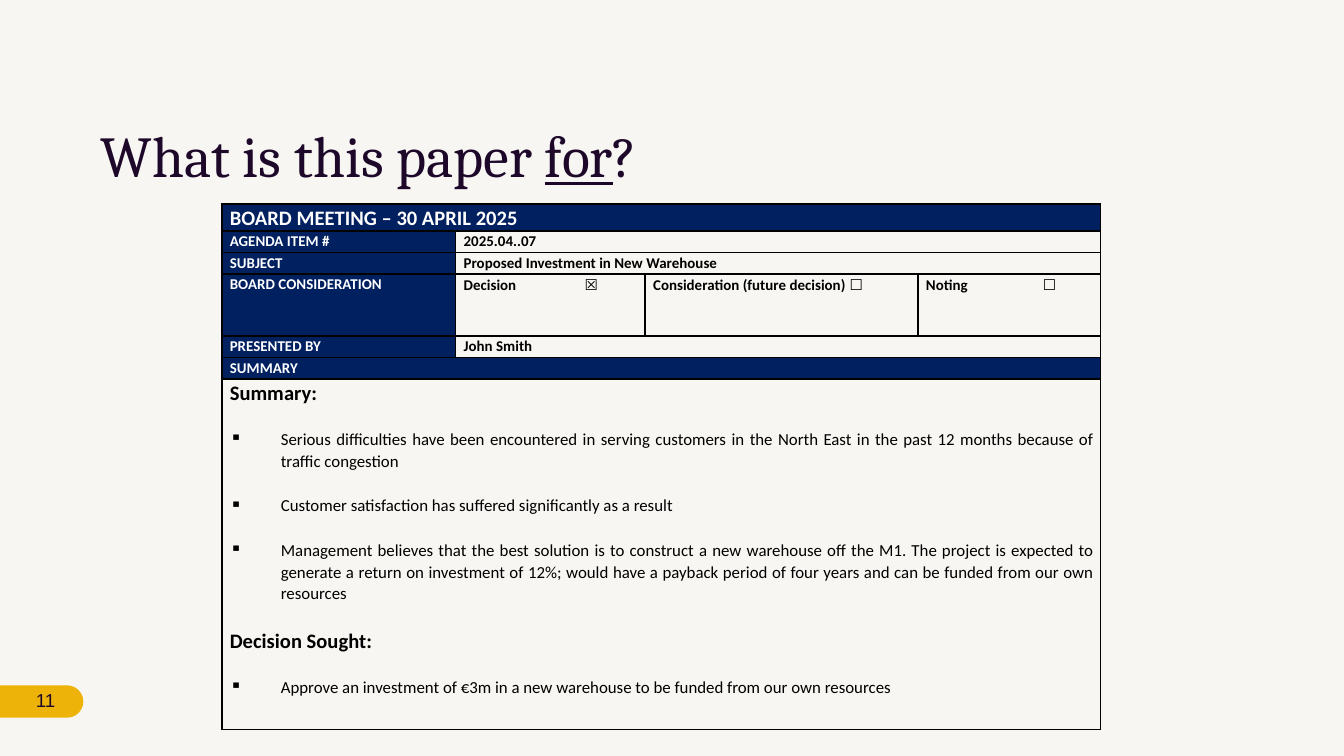
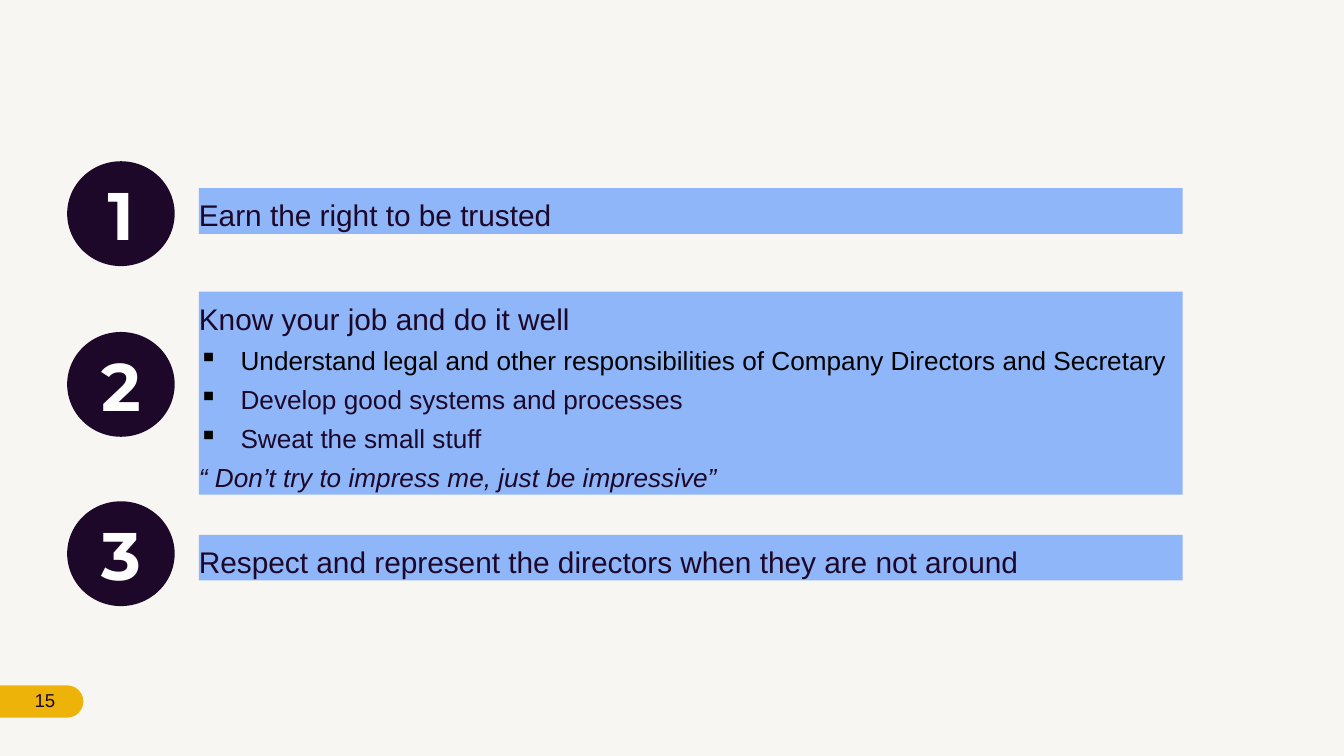
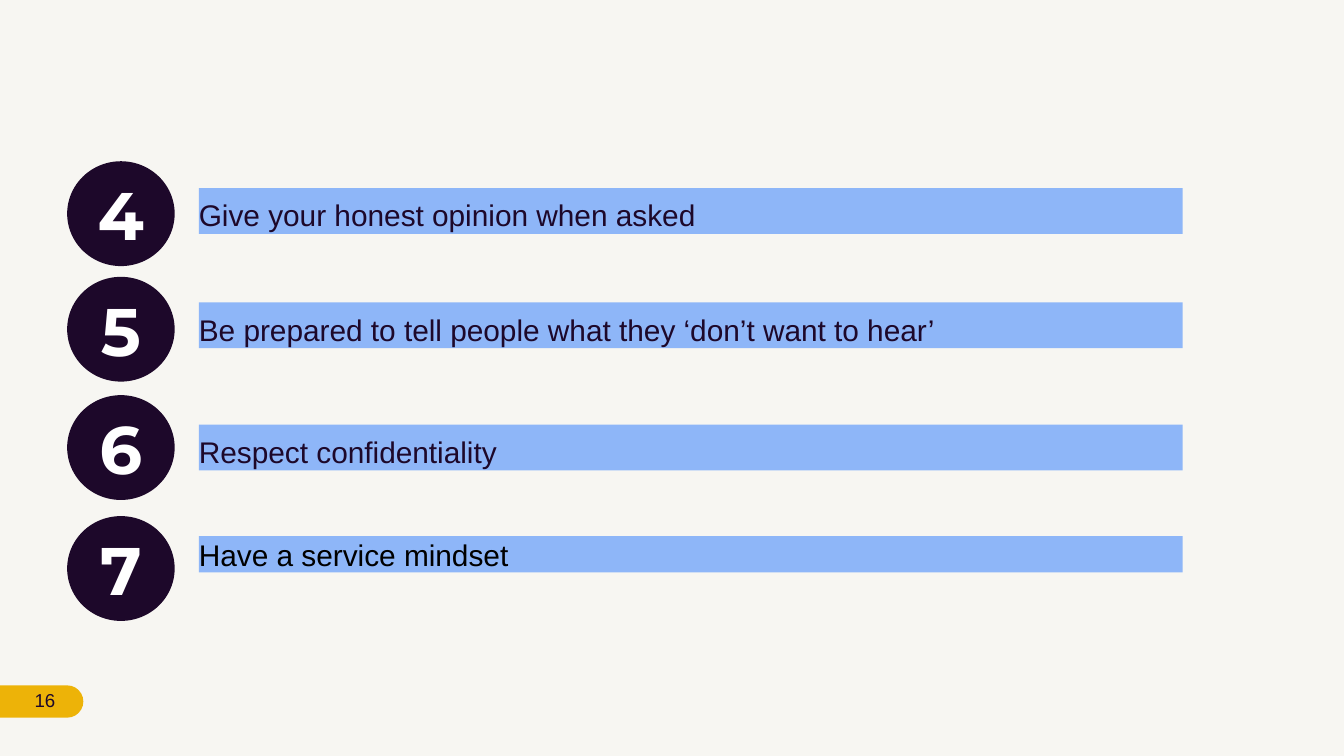
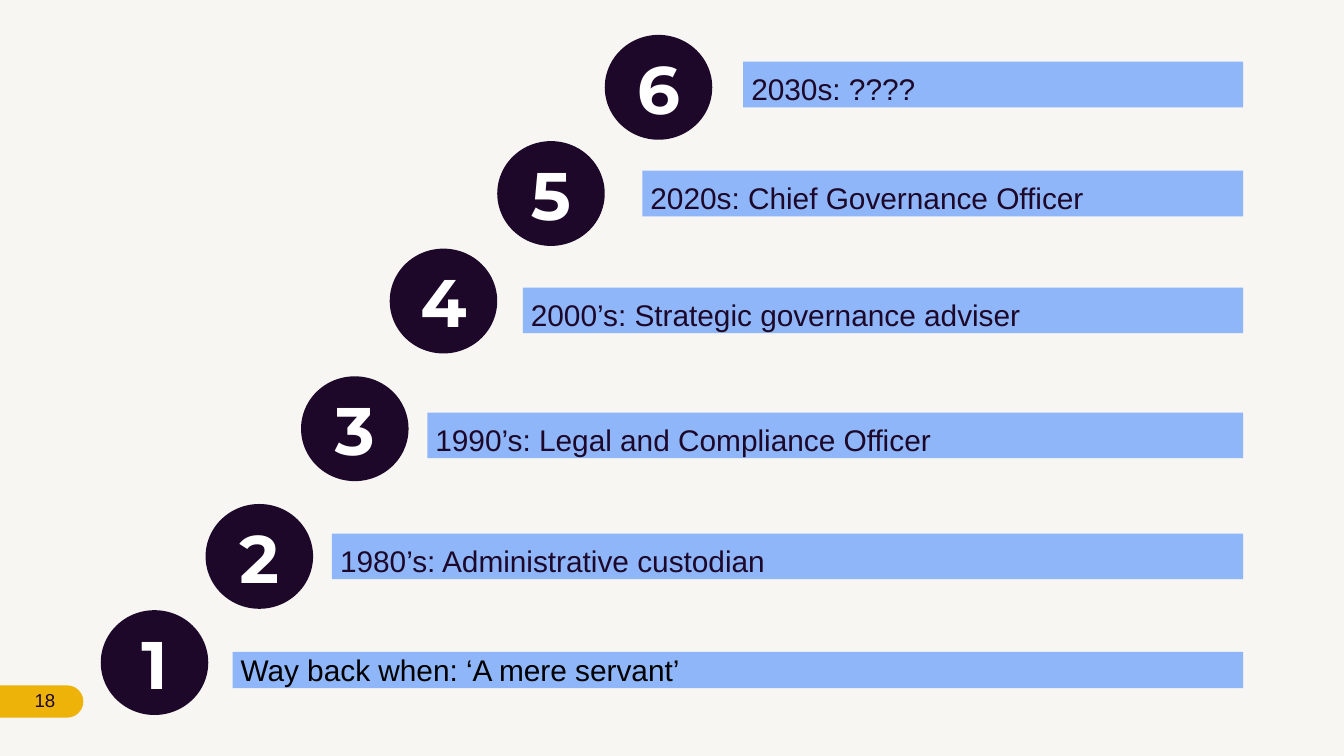
"""Build four slides on board papers and the company secretary's role."""
from lxml import etree
from pptx import Presentation
from pptx.dml.color import RGBColor
from pptx.enum.shapes import MSO_SHAPE
from pptx.enum.text import MSO_ANCHOR, MSO_AUTO_SIZE, PP_ALIGN
from pptx.oxml.ns import qn
from pptx.util import Inches, Pt

OVAL, RECT = MSO_SHAPE.OVAL, MSO_SHAPE.RECTANGLE
TAB = MSO_SHAPE.ROUND_2_SAME_RECTANGLE
LEFT, MID, RIGHT, JUST = PP_ALIGN.LEFT, PP_ALIGN.CENTER, PP_ALIGN.RIGHT, PP_ALIGN.JUSTIFY
TOP, CENTRE = MSO_ANCHOR.TOP, MSO_ANCHOR.MIDDLE
GROW = MSO_AUTO_SIZE.SHAPE_TO_FIT_TEXT


class Theme:
    paper, plum, gold, sky = "F7F6F2", "1D082A", "EDB308", "8EB6F8"
    navy, black, white = "002060", "000000", "FFFFFF"
    title = ("Cambria", 31, plum, False)
    page = ("Arial", 10, plum, False)
    ball = ("Montserrat", 36, white, True)
    lead = ("Arial", 16, plum, False)
    dark = ("Arial", 16, black, False)
    item = ("Arial", 14, plum, False)
    key = ("Arial", 14, black, False)
    band = ("Calibri", 11, white, True)
    label = ("Calibri", 8, white, True)
    value = ("Calibri", 8, black, True)
    head = ("Calibri", 11, black, True)
    body = ("Calibri", 9, black, False)


prs = Presentation()
prs.slide_width = Inches(10)
prs.slide_height = prs.slide_width * 9 // 16
UNIT = prs.slide_width // 100
back = prs.slide_master.background.fill
back.solid()
back.fore_color.rgb = RGBColor.from_string(Theme.paper)


def put(slide, box, kind=None, fill=None, pad=0, anchor=TOP):
    """Place a shape or text box, with its box in grid units."""
    area = [round(n * UNIT) for n in box]
    if kind is None:
        shape = slide.shapes.add_textbox(*area)
    else:
        shape = slide.shapes.add_shape(kind, *area)
        shape.shadow.inherit = False
        shape.fill.solid()
        shape.fill.fore_color.rgb = RGBColor.from_string(fill)
        shape.line.fill.background()
    frame = shape.text_frame
    frame.word_wrap = True
    frame.vertical_anchor = anchor
    frame.margin_left = frame.margin_right = round(pad * UNIT)
    frame.margin_top = frame.margin_bottom = round(pad * UNIT)
    return shape


def write(par, text, look, align=LEFT, space=1.0, dent=0, stop=0):
    """Fill a paragraph, with an optional bullet indent or tab stop."""
    par.alignment = align
    par.line_spacing = space
    props = par._p.get_or_add_pPr()
    if dent:
        props.set("marL", str(round(dent * UNIT)))
        props.set("indent", str(-round(dent * UNIT)))
        tint = etree.SubElement(props, qn("a:buClr"))
        etree.SubElement(tint, qn("a:srgbClr"), val=Theme.black)
        etree.SubElement(props, qn("a:buChar"), char="▪")
    if stop:
        tabs = etree.SubElement(props, qn("a:tabLst"))
        etree.SubElement(tabs, qn("a:tab"), pos=str(round(stop * UNIT)), algn="l")
    face, size, tint, bold = look
    font = par.font
    font.name, font.size, font.bold = face, Pt(size), bold
    font.color.rgb = RGBColor.from_string(tint)
    par.add_run().text = text


slides = []
for num in (11, 15, 16, 18):
    slide = prs.slides.add_slide(prs.slide_layouts[6])
    flag = put(slide, (1.9, 49.1, 2.4, 6.2), TAB, Theme.gold)
    flag.rotation = 90
    flag.adjustments[0], flag.adjustments[1] = 0.5, 0
    page = put(slide, (1.1, 50.4, 4, 3.7), pad=1)
    write(page.text_frame.paragraphs[0], str(num), Theme.page, RIGHT)
    slides.append(slide)

slide = slides[0]
par = put(slide, (7.5, 8.9, 64.8, 6.3)).text_frame.paragraphs[0]
write(par, "What is this paper ", Theme.title)
run = par.add_run()
run.text, run.font.underline = "for", True
par.add_run().text = "?"

cols = (17.4, 14.1, 20.3, 13.6)
rows = (2, 1.6, 1.6, 4.6, 1.6, 1.6, 26.1)
area = [round(n * UNIT) for n in (16.5, 15.2, sum(cols), sum(rows))]
grid = slide.shapes.add_table(len(rows), len(cols), *area).table
grid.first_row = grid.horz_banding = False
for col, size in zip(grid.columns, cols):
    col.width = round(size * UNIT)
for row, size in zip(grid.rows, rows):
    row.height = round(size * UNIT)
for r, c in ((0, 0), (1, 1), (2, 1), (4, 1), (5, 0), (6, 0)):
    grid.cell(r, c).merge(grid.cell(r, 3))

for r in range(len(rows)):
    for c in range(len(cols)):
        cell = grid.cell(r, c)
        cell.margin_left = cell.margin_right = round(0.6 * UNIT)
        cell.margin_top = cell.margin_bottom = 0
        if r in (0, 5) or (c == 0 and r < 6):
            cell.fill.solid()
            cell.fill.fore_color.rgb = RGBColor.from_string(Theme.navy)
        else:
            cell.fill.background()
        props = cell._tc.get_or_add_tcPr()
        for spot, side in enumerate(("lnL", "lnR", "lnT", "lnB")):
            line = etree.Element(qn("a:" + side), w=str(Pt(1)))
            fill = etree.SubElement(line, qn("a:solidFill"))
            etree.SubElement(fill, qn("a:srgbClr"), val=Theme.black)
            props.insert(spot, line)

facts = [
    (0, 0, "BOARD MEETING – 30 APRIL 2025", Theme.band),
    (1, 0, "AGENDA ITEM #", Theme.label),
    (1, 1, "2025.04..07", Theme.value),
    (2, 0, "SUBJECT", Theme.label),
    (2, 1, "Proposed Investment in New Warehouse", Theme.value),
    (3, 0, "BOARD CONSIDERATION", Theme.label),
    (4, 0, "PRESENTED BY", Theme.label),
    (4, 1, "John Smith", Theme.value),
    (5, 0, "SUMMARY", Theme.label),
]
for r, c, text, look in facts:
    write(grid.cell(r, c).text_frame.paragraphs[0], text, look, JUST, 1.07)

checks = [("Decision\t", "☒", 9), ("Consideration (future decision)", " ☐", 0),
          ("Noting\t", "☐", 8.7)]
for c, (text, mark, stop) in enumerate(checks, 1):
    par = grid.cell(3, c).text_frame.paragraphs[0]
    write(par, text, Theme.value, JUST, 1.07, stop=stop)
    run = par.add_run()
    run.text, run.font.name = mark, "Lato"

brief = [
    ("Summary:", Theme.head, 0),
    ("Serious difficulties have been encountered in serving customers in the North East "
     "in the past 12 months because of traffic congestion", Theme.body, 3.8),
    ("Customer satisfaction has suffered significantly as a result", Theme.body, 3.8),
    ("Management believes that the best solution is to construct a new warehouse off the M1. "
     "The project is expected to generate a return on investment of 12%; would have a payback "
     "period of four years and can be funded from our own resources", Theme.body, 3.8),
    ("Decision Sought:", Theme.head, 0),
    ("Approve an investment of €3m in a new warehouse to be funded from our own resources",
     Theme.body, 3.8),
]
frame = grid.cell(6, 0).text_frame
for n, (text, look, dent) in enumerate(brief):
    par = frame.add_paragraph() if n else frame.paragraphs[0]
    if n:
        par.space_before = Pt(6)
    par.space_after = Pt(6)
    write(par, text, look, JUST, 1.07, dent)

job = [
    ("Know your job and do it well", Theme.lead, 0),
    ("Understand legal and other responsibilities of Company Directors and Secretary",
     Theme.key, 3.1),
    ("Develop good systems and processes", Theme.item, 3.1),
    ("Sweat the small stuff", Theme.item, 3.1),
    ("“ Don’t try to impress me, just be impressive”", Theme.item, 0),
]
lists = [
    (slides[1], 88, 0, [
        (1, 5, 12, 14.8, 14, [("Earn the right to be trusted", Theme.lead, 0)]),
        (2, 5, 24.7, 14.8, 21.7, job),
        (3, 5, 37.3, 14.8, 39.8,
         [("Respect and represent the directors when they are not around", Theme.lead, 0)]),
    ]),
    (slides[2], 88, 0, [
        (4, 5, 12, 14.8, 14, [("Give your honest opinion when asked", Theme.lead, 0)]),
        (5, 5, 20.6, 14.8, 22.5,
         [("Be prepared to tell people what they ‘don’t want to hear’", Theme.lead, 0)]),
        (6, 5, 29.4, 14.8, 31.6, [("Respect confidentiality", Theme.lead, 0)]),
        (7, 5, 38.4, 14.8, 39.9, [("Have a service mindset", Theme.dark, 0)]),
    ]),
    (slides[3], 92.5, 0.6, [
        (1, 7.5, 45.4, 17.3, 48.5, [("Way back when: ‘A mere servant’", Theme.dark, 0)]),
        (2, 15.3, 37.5, 24.7, 39.7, [("1980’s: Administrative custodian", Theme.lead, 0)]),
        (3, 22.4, 28, 31.8, 30.7, [("1990’s: Legal and Compliance Officer", Theme.lead, 0)]),
        (4, 29, 18.5, 38.9, 21.4, [("2000’s: Strategic governance adviser", Theme.lead, 0)]),
        (5, 37, 10.5, 47.8, 12.7, [("2020s: Chief Governance Officer", Theme.lead, 0)]),
        (6, 45, 2.6, 55.3, 4.6, [("2030s: ????", Theme.lead, 0)]),
    ]),
]
for slide, edge, inset, points in lists:
    for num, x, y, left, top, lines in points:
        ball = put(slide, (x, y, 8, 7.8), OVAL, Theme.plum, 1, CENTRE)
        write(ball.text_frame.paragraphs[0], str(num), Theme.ball, MID)
        plain = lines[0][1] is Theme.dark
        high = 2.7 if plain else 3.4 + 2.93 * (len(lines) - 1)
        frame = put(slide, (left, top, edge - left, high), RECT, Theme.sky).text_frame
        frame.auto_size = GROW
        frame.margin_left = round(inset * UNIT)
        for n, (text, look, dent) in enumerate(lines):
            par = frame.add_paragraph() if n else frame.paragraphs[0]
            write(par, text, look, LEFT, 1.0 if plain else 1.25, dent)
            par.font.italic = text.startswith("“")

prs.save("out.pptx")
